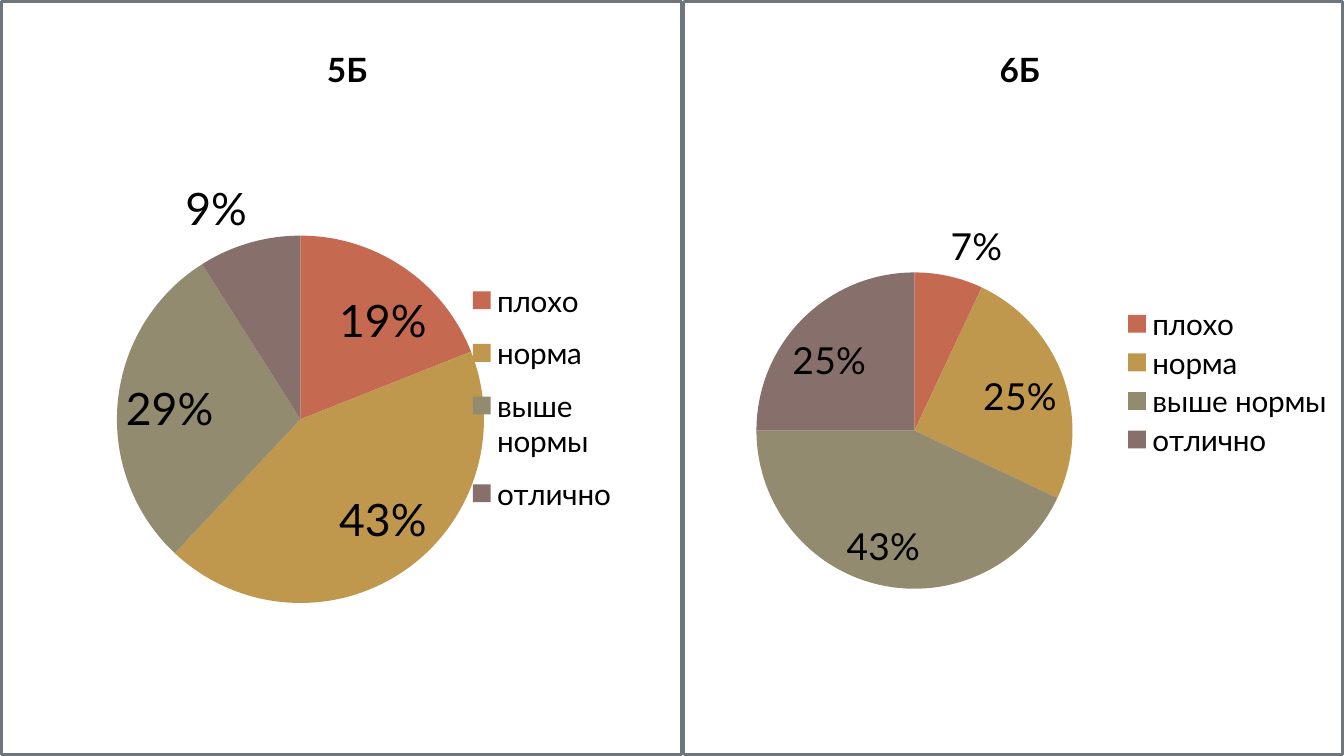
import pptx
import pptx.chart.data
import pptx.dml.color
import pptx.enum.chart
import pptx.oxml
import pptx.oxml.ns
import pptx.util

Cm = pptx.util.Cm
Pt = pptx.util.Pt
qn = pptx.oxml.ns.qn

COLORS = {
    "плохо": "C66951",
    "норма": "BF974D",
    "выше нормы": "928B70",
    "отлично": "87706B",
    "text": "000000",
    "back": "FFFFFF",
    "edge": "6F777D",
}
CATS = ["плохо", "норма", "выше нормы", "отлично"]
HIGH = 14.28

CHARTS = [
    {"name": "5Б", "vals": [19, 43, 29, 9], "left": 0, "width": 12.9, "size": 24,
     "pie": (0.17, 0.31, 0.54, 0.49), "key": (0.68, 0.35, 0.23, 0.35)},
    {"name": "6Б", "vals": [7, 25, 43, 25], "left": 12.9, "width": 12.5, "size": 20,
     "pie": (0.11, 0.36, 0.48, 0.42), "key": (0.66, 0.4, 0.33, 0.21)},
]


def rgb(name):
    return pptx.dml.color.RGBColor.from_string(COLORS[name])


def style(font, size, bold=False):
    for key, val in {"name": "Lato", "size": Pt(size), "bold": bold}.items():
        setattr(font, key, val)
    font.color.rgb = rgb("text")


def place(part, after, box, inner=False):
    """Give a chart part a manual layout, in fractions of the chart."""
    for old in part.findall(qn("c:layout")):
        part.remove(old)
    target = '<c:layoutTarget val="inner"/>' if inner else ""
    modes = "".join(f'<c:{axis}Mode val="edge"/>' for axis in "xy")
    sizes = "".join(f'<c:{tag} val="{val}"/>' for tag, val in zip("xywh", box))
    layout = pptx.oxml.parse_xml(
        f'<c:layout {pptx.oxml.ns.nsdecls("c")}><c:manualLayout>'
        f"{target}{modes}{sizes}</c:manualLayout></c:layout>")
    if after is None:
        part.insert(0, layout)
    else:
        part.find(qn(after)).addnext(layout)


def frame(space):
    """Fill and outline the whole chart area."""
    area = pptx.oxml.parse_xml(
        f'<c:spPr {pptx.oxml.ns.nsdecls("c", "a")}>'
        f'<a:solidFill><a:srgbClr val="{COLORS["back"]}"/></a:solidFill>'
        f'<a:ln w="{Pt(1.5)}"><a:solidFill><a:srgbClr val="{COLORS["edge"]}"/>'
        "</a:solidFill></a:ln></c:spPr>")
    space.find(qn("c:chart")).addnext(area)


def set_title(chart, text):
    chart.has_title = True
    title = chart.chart_title
    title.text_frame.text = text
    style(title.text_frame.paragraphs[0].runs[0].font, 18, True)
    title.include_in_layout = False
    place(title._element, "c:tx", (0.47, 0.05))


def set_key(chart, box):
    chart.has_legend = True
    key = chart.legend
    key.position = pptx.enum.chart.XL_LEGEND_POSITION.RIGHT
    key.include_in_layout = False
    style(key.font, 16)
    place(key._element, "c:legendPos", box)


def set_labels(plot, size):
    plot.has_data_labels = True
    labels = plot.data_labels
    style(labels.font, size)
    fmt = {
        "show_percentage": True,
        "show_value": False,
        "number_format": "0%",
        "number_format_is_linked": False,
        "position": pptx.enum.chart.XL_LABEL_POSITION.BEST_FIT,
    }
    for key, val in fmt.items():
        setattr(labels, key, val)


def add_pie(slide, item):
    data = pptx.chart.data.CategoryChartData()
    data.categories = CATS
    data.add_series(item["name"], item["vals"])
    chart = slide.shapes.add_chart(
        pptx.enum.chart.XL_CHART_TYPE.PIE, Cm(item["left"]), Cm(0),
        Cm(item["width"]), Cm(HIGH), data).chart
    style(chart.font, 10)
    set_title(chart, item["name"])
    set_key(chart, item["key"])
    plot = chart.plots[0]
    plot.vary_by_categories = True
    set_labels(plot, item["size"])
    for num, cat in enumerate(CATS):
        fill = plot.series[0].points[num].format.fill
        fill.solid()
        fill.fore_color.rgb = rgb(cat)
    space = chart._chartSpace
    place(space.chart.plotArea, None, item["pie"], inner=True)
    frame(space)


def main():
    deck = pptx.Presentation()
    deck.slide_width, deck.slide_height = Cm(25.4), Cm(HIGH)
    slide = deck.slides.add_slide(deck.slide_layouts[6])
    for item in CHARTS:
        add_pie(slide, item)
    deck.save("out.pptx")


if __name__ == "__main__":
    main()
